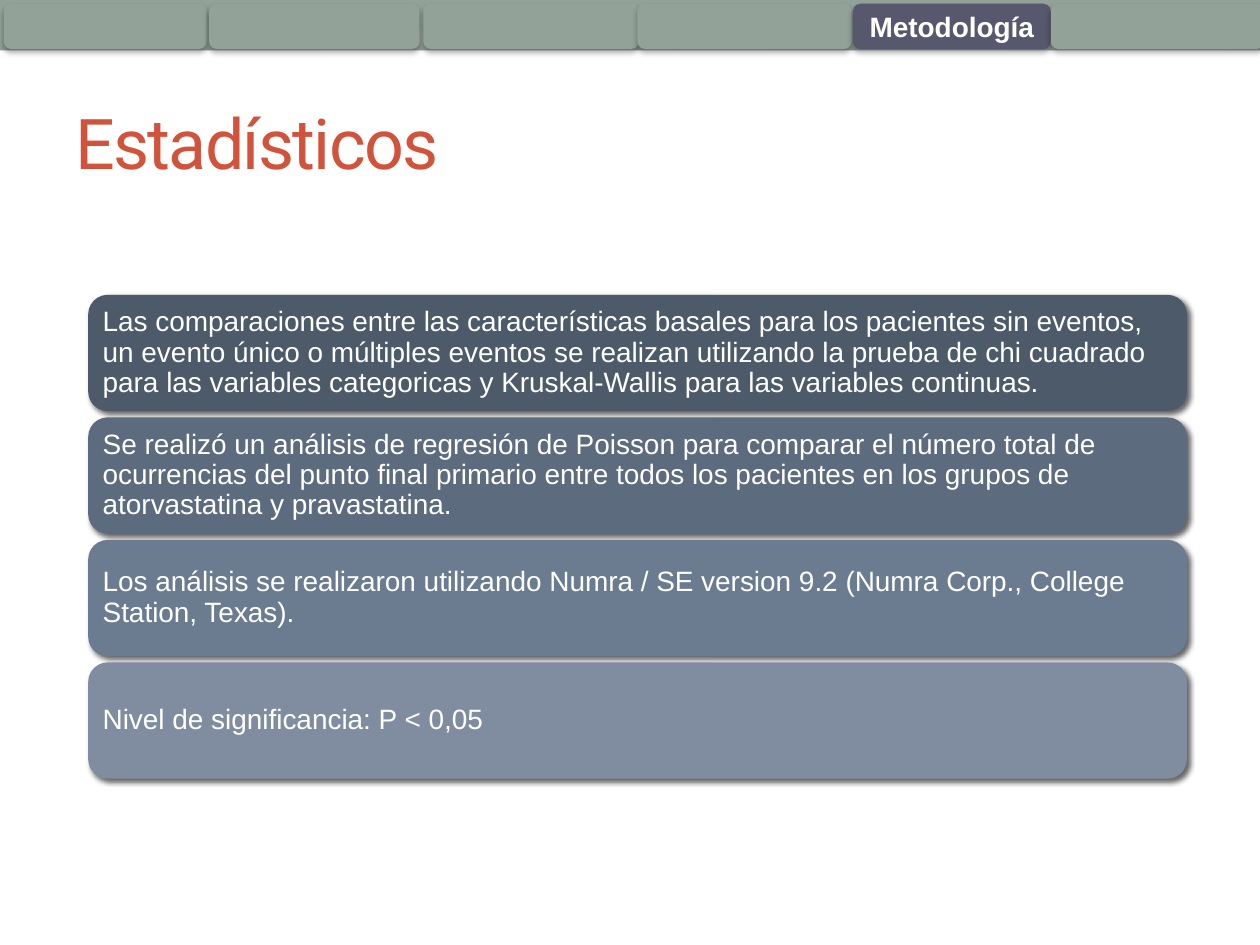
from lxml import etree
from pptx import Presentation
from pptx import util as u
from pptx.dml.color import RGBColor
from pptx.enum import shapes, text
from pptx.oxml.ns import qn

SAGE = "93A299"
WHITE = "FFFFFF"
TABS = [  # left, width, fill, label
    (0.03, 1.61, SAGE, ""),
    (1.66, 1.67, SAGE, ""),
    (3.36, 1.71, SAGE, ""),
    (5.06, 1.7, SAGE, ""),
    (6.77, 1.57, "57576E", "Metodología"),
    (8.34, 1.69, SAGE, ""),
]
CARDS = [
    ("4C5A6A", "Las comparaciones entre las características basales para los "
               "pacientes sin eventos, un evento único o múltiples eventos se "
               "realizan utilizando la prueba de chi cuadrado para las variables "
               "categoricas y Kruskal-Wallis para las variables continuas."),
    ("5C6B7E", "Se realizó un análisis de regresión de Poisson para comparar el "
               "número total de ocurrencias del punto final primario entre todos "
               "los pacientes en los grupos de atorvastatina y pravastatina."),
    ("6B7C91", "Los análisis se realizaron utilizando Numra / SE version 9.2 "
               "(Numra Corp., College Station, Texas)."),
    ("808DA0", "Nivel de significancia: P < 0,05"),
]


def color(value):
    return RGBColor.from_string(value)


def add_block(slide, kind, box, fill):
    shape = slide.shapes.add_shape(kind, *map(u.Inches, box))
    shape.shadow.inherit = False
    shape.fill.solid()
    shape.fill.fore_color.rgb = color(fill)
    shape.line.fill.background()
    return shape


def add_shadow(shape, opacity, blur, distance, angle):
    effects = shape._element.spPr.find(qn("a:effectLst"))
    shadow = etree.SubElement(
        effects, qn("a:outerShdw"), blurRad=str(u.Pt(blur)),
        dist=str(u.Pt(distance)), dir=str(angle * 60000),
        algn="ctr", rotWithShape="0")
    black = etree.SubElement(shadow, qn("a:srgbClr"), val="000000")
    etree.SubElement(black, qn("a:alpha"), val=str(opacity * 1000))


def write(shape, words, size, font, fill, align, inset, bold=False):
    frame = shape.text_frame
    frame.word_wrap = True
    frame.vertical_anchor = text.MSO_ANCHOR.MIDDLE
    frame.margin_left = frame.margin_right = u.Inches(inset)
    frame.margin_top = frame.margin_bottom = u.Inches(min(inset, 0.07))
    paragraph = frame.paragraphs[0]
    paragraph.text = words
    paragraph.alignment = align
    paragraph.font.size = u.Pt(size)
    paragraph.font.name = font
    paragraph.font.bold = bold
    paragraph.font.color.rgb = color(fill)
    return paragraph


def add_navigation(slide, left, top, width, height):
    # Full-width bar with one tab per section
    add_block(slide, shapes.MSO_SHAPE.RECTANGLE, (left, top, width, height), SAGE)
    for offset, tab_width, fill, label in TABS:
        box = (left + offset, top + 0.03, tab_width, height - 0.04)
        tab = add_block(slide, shapes.MSO_SHAPE.ROUNDED_RECTANGLE, box, fill)
        add_shadow(tab, 32, 3.5, 2.2, 90)
        if label:
            write(tab, label, 16, "Arial", WHITE, text.PP_ALIGN.CENTER, 0.05, bold=True)


def add_title(slide, left, top, width, height):
    title = slide.shapes.add_textbox(*map(u.Inches, (left, top, width, height)))
    paragraph = write(title, "Estadísticos", 40, "Roboto", "D2533C",
                      text.PP_ALIGN.LEFT, 0.1)
    # Slightly tightened letters
    paragraph.runs[0]._r.get_or_add_rPr().set("spc", "-100")


def add_cards(slide, left, top, width, height):
    # Equal cards stacked with a narrow gap
    gap = 0.05
    card_height = (height - gap * (len(CARDS) - 1)) / len(CARDS)
    for index, (fill, words) in enumerate(CARDS):
        box = (left, top + index * (card_height + gap), width, card_height)
        card = add_block(slide, shapes.MSO_SHAPE.ROUNDED_RECTANGLE, box, fill)
        add_shadow(card, 60, 3, 2, 45)
        paragraph = write(card, words, 16, "Arial", WHITE, text.PP_ALIGN.LEFT, 0.07)
        paragraph.line_spacing = 0.9


def main():
    presentation = Presentation()
    presentation.slide_width = u.Inches(10)
    presentation.slide_height = u.Inches(7.5)
    slide = presentation.slides.add_slide(presentation.slide_layouts[6])
    add_navigation(slide, 0, 0, 10, 0.4)
    add_title(slide, 0.5, 0.58, 9, 1.08)
    add_cards(slide, 0.7, 2.34, 8.72, 3.84)
    presentation.save("out.pptx")


if __name__ == "__main__":
    main()
